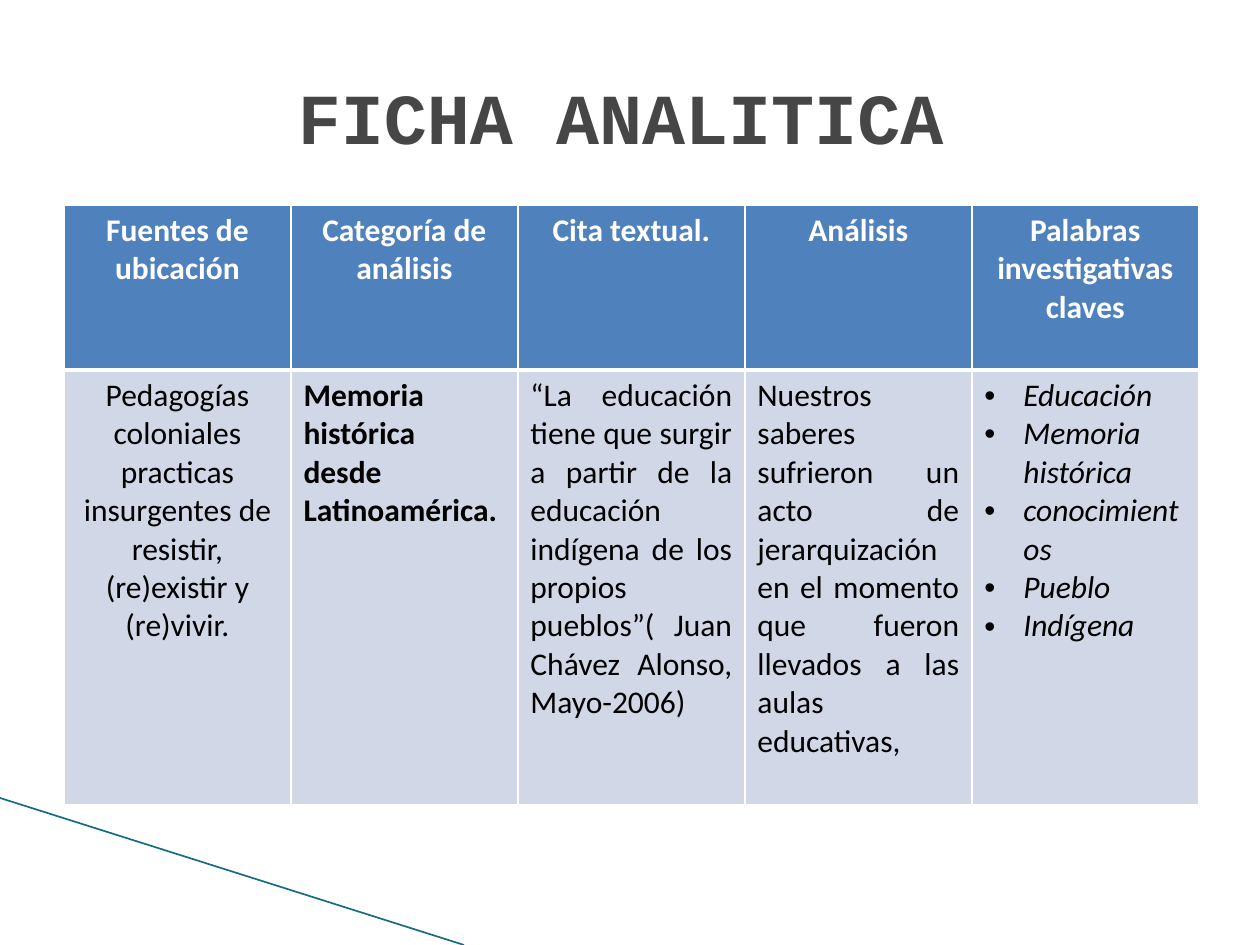
import pptx
import pptx.util
import pptx.dml.color
import pptx.enum.shapes
import pptx.enum.text
import pptx.oxml.ns
from lxml import etree

RGBColor = pptx.dml.color.RGBColor
ALIGN = pptx.enum.text.PP_ALIGN
PX = 914400 // 126

WHITE = RGBColor(0xFF, 0xFF, 0xFF)
BLACK = RGBColor(0, 0, 0)
HEADER_BLUE = RGBColor(0x4F, 0x81, 0xBD)
BODY_BLUE = RGBColor(0xD0, 0xD8, 0xE8)
TITLE_GRAY = RGBColor(0x46, 0x46, 0x46)
TEAL = RGBColor(0x15, 0x6D, 0x83)

TITLE = "FICHA ANALITICA"
HEADERS = ["Fuentes de ubicación", "Categoría de análisis", "Cita textual.",
           "Análisis", "Palabras investigativas claves"]
BODY = [
    (["Pedagogías coloniales practicas insurgentes de resistir, (re)existir y (re)vivir."],
     {"align": ALIGN.CENTER}),
    (["Memoria histórica", "desde Latinoamérica."], {"bold": True}),
    (["“La educación tiene que surgir a partir de la educación indígena de los "
      "propios pueblos”( Juan Chávez Alonso, Mayo-2006)"], {"align": ALIGN.JUSTIFY}),
    (["Nuestros saberes sufrieron un acto de jerarquización en el momento que "
      "fueron llevados a las aulas educativas,"], {"align": ALIGN.JUSTIFY}),
    (["Educación", "Memoria histórica", "conocimientos", "Pueblo", "Indígena"],
     {"italic": True, "bullet": True}),
]
COLUMN_WIDTH = 227
ROW_HEIGHTS = [165, 435]
BULLET_INDENT = 39


def px(value):
    return pptx.util.Emu(value * PX)


def add_child(parent, tag, **attributes):
    return etree.SubElement(parent, pptx.oxml.ns.qn(tag), attributes)


def style_font(font, name, size, color, bold, italic=False):
    font.name = name
    font.size = pptx.util.Pt(size)
    font.color.rgb = color
    font.bold = bold
    font.italic = italic


def add_borders(cell, widths):
    properties = cell._tc.get_or_add_tcPr()
    for side, width in zip("LRTB", widths):
        line = add_child(properties, f"a:ln{side}", w=str(pptx.util.Pt(width)))
        fill = add_child(line, "a:solidFill")
        add_child(fill, "a:srgbClr", val=str(WHITE))


def fill_cell(cell, lines, fill, color, borders,
              align=ALIGN.LEFT, bold=False, italic=False, bullet=False):
    add_borders(cell, borders)
    cell.fill.solid()
    cell.fill.fore_color.rgb = fill
    cell.text_frame.text = "\n".join(lines)
    for para in cell.text_frame.paragraphs:
        para.alignment = align
        if bullet:
            properties = para._p.get_or_add_pPr()
            properties.set("marL", str(px(BULLET_INDENT)))
            properties.set("indent", str(-px(BULLET_INDENT)))
            add_child(properties, "a:buFont", typeface="Arial")
            add_child(properties, "a:buChar", char="•")
        for run in para.runs:
            style_font(run.font, "Calibri", 18, color, bold, italic)


def add_title(page):
    title = page.shapes.title
    title.left, title.top, title.width, title.height = map(px, (54, 37, 1134, 157))
    title.text_frame.text = TITLE
    title.text_frame.vertical_anchor = pptx.enum.text.MSO_ANCHOR.MIDDLE
    para = title.text_frame.paragraphs[0]
    para.alignment = ALIGN.CENTER
    style_font(para.runs[0].font, "Courier New", 41, TITLE_GRAY, True)


def add_corner_line(page):
    line = page.shapes.add_connector(
        pptx.enum.shapes.MSO_CONNECTOR.STRAIGHT, *map(px, (0, 798, 464, 945)))
    line.line.color.rgb = TEAL
    line.line.width = pptx.util.Pt(0.95)
    add_child(line._element.spPr, "a:effectLst")


def add_analysis_table(page):
    frame = page.shapes.add_table(
        len(ROW_HEIGHTS), len(HEADERS), px(64), px(205),
        px(COLUMN_WIDTH * len(HEADERS)), px(sum(ROW_HEIGHTS)))
    table = frame.table
    for column in table.columns:
        column.width = px(COLUMN_WIDTH)
    for row, height in zip(table.rows, ROW_HEIGHTS):
        row.height = px(height)
    for index, (header, (lines, style)) in enumerate(zip(HEADERS, BODY)):
        fill_cell(table.cell(0, index), [header], HEADER_BLUE, WHITE, (1, 1, 1, 3),
                  align=ALIGN.CENTER, bold=True)
        fill_cell(table.cell(1, index), lines, BODY_BLUE, BLACK, (1, 1, 3, 1), **style)


def main():
    deck = pptx.Presentation()
    deck.slide_width, deck.slide_height = px(1260), px(945)
    page = deck.slides.add_slide(deck.slide_layouts[5])
    add_corner_line(page)
    add_analysis_table(page)
    add_title(page)
    deck.save("out.pptx")


if __name__ == "__main__":
    main()
